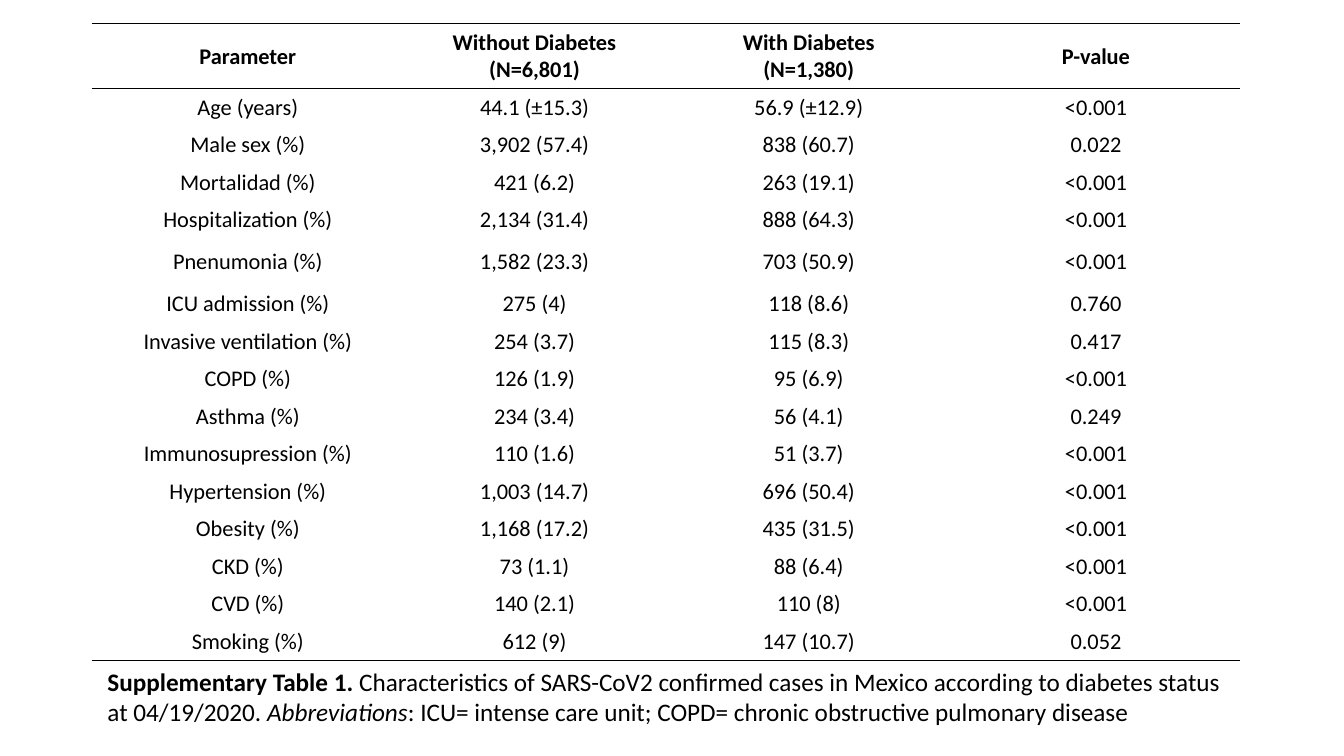
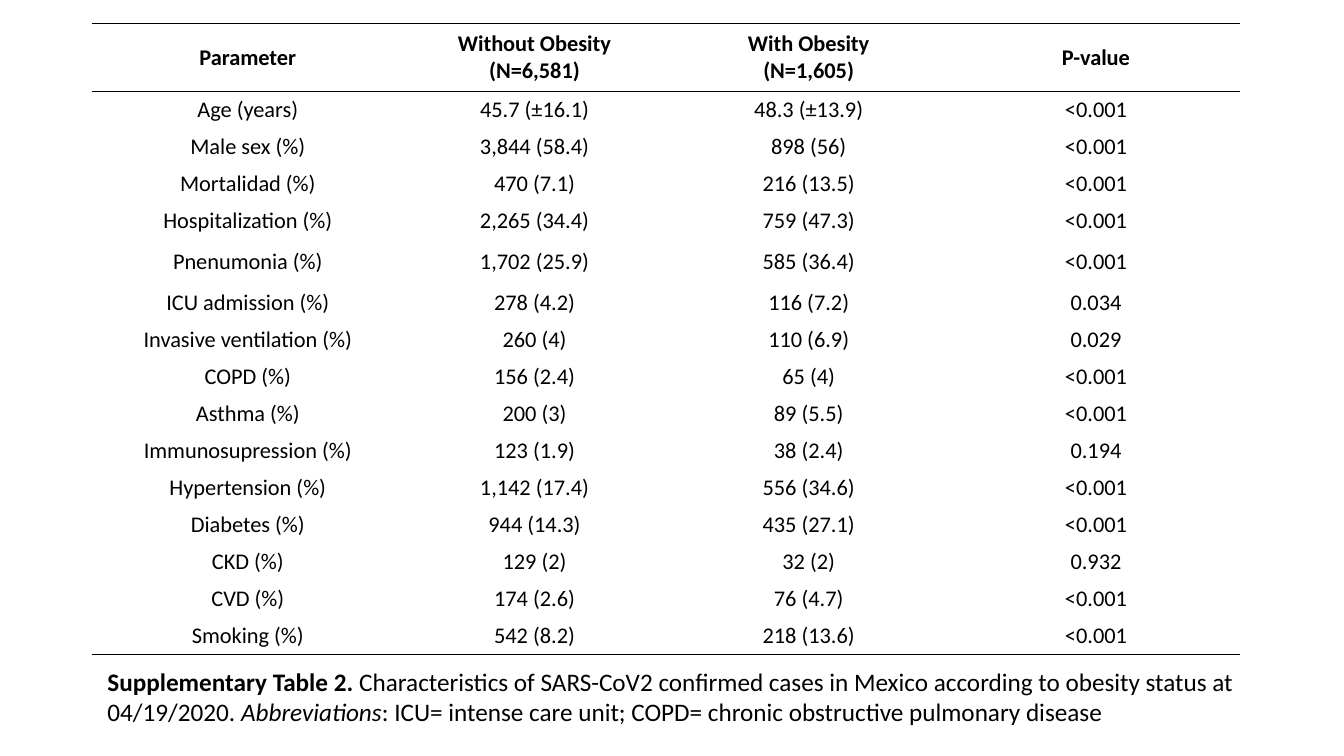
from lxml import etree
from pptx import Presentation
from pptx.dml.color import RGBColor
from pptx.enum.text import MSO_ANCHOR as Anchor, PP_ALIGN as Align
from pptx.oxml.ns import qn
from pptx.util import Cm, Pt

BLACK = RGBColor(0x00, 0x00, 0x00)
FONT = "Calibri"
NO_STYLE_NO_GRID = "{2D5ABB26-0587-4C30-8999-92F81FD0307C}"

LEFT, TOP = 2.31, 0.6
COLUMN_WIDTHS = (7.87, 6.58, 7.24, 7.24)
TABLE_WIDTH = sum(COLUMN_WIDTHS)
TALL_ROW = 5
CELL_FORMAT = {
    "vertical_anchor": Anchor.MIDDLE,
    "margin_top": Cm(0.05),
    "margin_bottom": Cm(0.05),
}

TABLES = [
    {
        "number": 1,
        "status": "diabetes",
        "groups": ("Diabetes", "6,801", "1,380"),
        "heights": {"total": 16.04, "header": 1.64, "tall": 1.17},
        "rows": [
            ("Age (years)", "44.1 (±15.3)", "56.9 (±12.9)", "<0.001"),
            ("Male sex (%)", "3,902 (57.4)", "838 (60.7)", "0.022"),
            ("Mortalidad (%)", "421 (6.2)", "263 (19.1)", "<0.001"),
            ("Hospitalization (%)", "2,134 (31.4)", "888 (64.3)", "<0.001"),
            ("Pnenumonia (%)", "1,582 (23.3)", "703 (50.9)", "<0.001"),
            ("ICU admission (%)", "275 (4)", "118 (8.6)", "0.760"),
            ("Invasive ventilation (%)", "254 (3.7)", "115 (8.3)", "0.417"),
            ("COPD (%)", "126 (1.9)", "95 (6.9)", "<0.001"),
            ("Asthma (%)", "234 (3.4)", "56 (4.1)", "0.249"),
            ("Immunosupression (%)", "110 (1.6)", "51 (3.7)", "<0.001"),
            ("Hypertension (%)", "1,003 (14.7)", "696 (50.4)", "<0.001"),
            ("Obesity (%)", "1,168 (17.2)", "435 (31.5)", "<0.001"),
            ("CKD (%)", "73 (1.1)", "88 (6.4)", "<0.001"),
            ("CVD (%)", "140 (2.1)", "110 (8)", "<0.001"),
            ("Smoking (%)", "612 (9)", "147 (10.7)", "0.052"),
        ],
    },
    {
        "number": 2,
        "status": "obesity",
        "groups": ("Obesity", "6,581", "1,605"),
        "heights": {"total": 15.91, "header": 1.7, "tall": 1.15},
        "rows": [
            ("Age (years)", "45.7 (±16.1)", "48.3 (±13.9)", "<0.001"),
            ("Male sex (%)", "3,844 (58.4)", "898 (56)", "<0.001"),
            ("Mortalidad (%)", "470 (7.1)", "216 (13.5)", "<0.001"),
            ("Hospitalization (%)", "2,265 (34.4)", "759 (47.3)", "<0.001"),
            ("Pnenumonia (%)", "1,702 (25.9)", "585 (36.4)", "<0.001"),
            ("ICU admission (%)", "278 (4.2)", "116 (7.2)", "0.034"),
            ("Invasive ventilation (%)", "260 (4)", "110 (6.9)", "0.029"),
            ("COPD (%)", "156 (2.4)", "65 (4)", "<0.001"),
            ("Asthma (%)", "200 (3)", "89 (5.5)", "<0.001"),
            ("Immunosupression (%)", "123 (1.9)", "38 (2.4)", "0.194"),
            ("Hypertension (%)", "1,142 (17.4)", "556 (34.6)", "<0.001"),
            ("Diabetes (%)", "944 (14.3)", "435 (27.1)", "<0.001"),
            ("CKD (%)", "129 (2)", "32 (2)", "0.932"),
            ("CVD (%)", "174 (2.6)", "76 (4.7)", "<0.001"),
            ("Smoking (%)", "542 (8.2)", "218 (13.6)", "<0.001"),
        ],
    },
]


class TableDeck:
    """Holds the deck, its style and the current page."""

    def __init__(self):
        self.deck = Presentation()
        self.deck.slide_width = Cm(33.87)
        self.deck.slide_height = Cm(19.05)
        self.page = None

    def add_page(self):
        self.page = self.deck.slides.add_slide(self.deck.slide_layouts[6])

    def add_span(self, para, text, size, **formats):
        span = para.add_run()
        span.text = text
        span.font.color.rgb = BLACK
        for key, value in {"name": FONT, "size": Pt(size), **formats}.items():
            setattr(span.font, key, value)

    def fill_cell(self, cell, text, bold, sides):
        for key, value in CELL_FORMAT.items():
            setattr(cell, key, value)
        cell.fill.background()
        frame = cell.text_frame
        for index, line in enumerate(text.split("\n")):
            para = frame.add_paragraph() if index else frame.paragraphs[0]
            para.alignment = Align.CENTER
            self.add_span(para, line, 16, bold=bold)
        self.rule_cell(cell, sides)

    def rule_cell(self, cell, sides):
        """Draw a thin line on each side named, T before B."""
        properties = cell._tc.get_or_add_tcPr()
        for index, side in enumerate(sides):
            line = etree.Element(qn(f"a:ln{side}"), w=str(Pt(1)))
            fill = etree.SubElement(line, qn("a:solidFill"))
            etree.SubElement(fill, qn("a:srgbClr"), val=str(BLACK))
            properties.insert(index, line)

    def add_table(self, rows, heights):
        frame = self.page.shapes.add_table(
            len(rows), len(COLUMN_WIDTHS),
            Cm(LEFT), Cm(TOP), Cm(TABLE_WIDTH), Cm(heights["total"]))
        table = frame.table
        table.first_row = table.horz_banding = False
        table._tbl.tblPr.find(qn("a:tableStyleId")).text = NO_STYLE_NO_GRID
        for column, width in zip(table.columns, COLUMN_WIDTHS):
            column.width = Cm(width)

        special = {0: heights["header"], TALL_ROW: heights["tall"]}
        plain = ((heights["total"] - sum(special.values()))
                 / (len(rows) - len(special)))
        sides = {0: "TB", len(rows) - 1: "B"}
        for index, texts in enumerate(rows):
            row = table.rows[index]
            row.height = Cm(special.get(index, plain))
            for cell, text in zip(row.cells, texts):
                self.fill_cell(cell, text, index == 0, sides.get(index, ""))

    def add_caption(self, number, status):
        box = self.page.shapes.add_textbox(
            Cm(2.46), Cm(16.66), Cm(TABLE_WIDTH), Cm(1.8))
        box.text_frame.word_wrap = True
        para = box.text_frame.paragraphs[0]
        self.add_span(para, f"Supplementary Table {number}. ", 18, bold=True)
        self.add_span(
            para, "Characteristics of SARS-CoV2 confirmed cases in Mexico "
            f"according to {status} status at 04/19/2020. ", 18)
        self.add_span(para, "Abbreviations", 18, italic=True)
        self.add_span(para, ": ICU= intense care unit; COPD= chronic "
                      "obstructive pulmonary disease", 18)


def main():
    tables = TableDeck()
    for content in TABLES:
        condition, without_count, with_count = content["groups"]
        header = ("Parameter",
                  f"Without {condition}\n(N={without_count})",
                  f"With {condition}\n(N={with_count})",
                  "P-value")
        tables.add_page()
        tables.add_table([header] + content["rows"], content["heights"])
        tables.add_caption(content["number"], content["status"])
    tables.deck.save("out.pptx")


if __name__ == "__main__":
    main()
